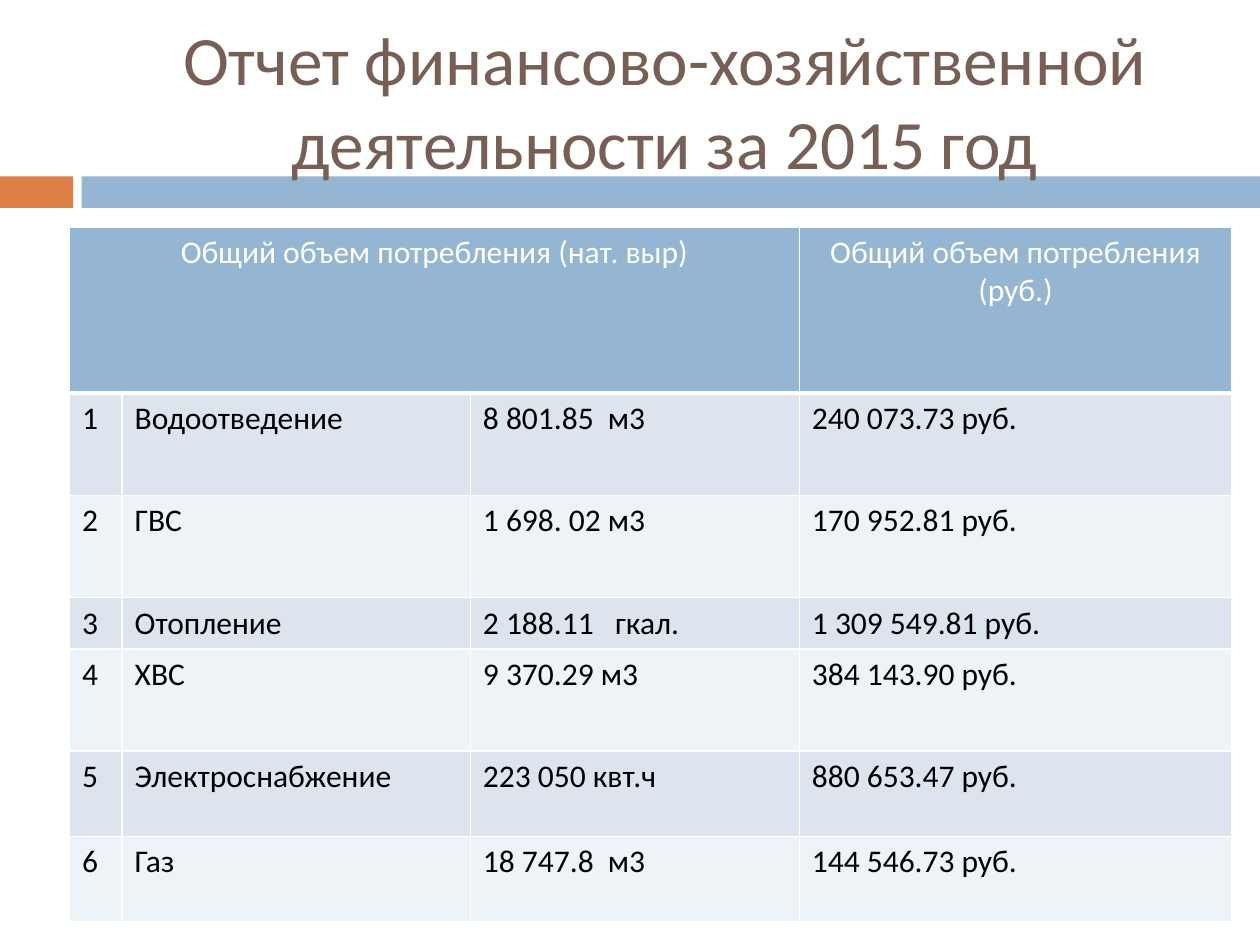
from dataclasses import dataclass

from lxml import etree
from pptx import Presentation
from pptx.dml.color import RGBColor
from pptx.enum.shapes import MSO_SHAPE
from pptx.enum.text import MSO_ANCHOR, PP_ALIGN
from pptx.oxml.ns import qn
from pptx.util import Pt

RECTANGLE = MSO_SHAPE.RECTANGLE
MIDDLE = MSO_ANCHOR.MIDDLE
LEFT = PP_ALIGN.LEFT
CENTER = PP_ALIGN.CENTER

FONT = "Calibri"
WHITE = "FFFFFF"
BLACK = "000000"
BLUE = "94B6D2"
ORANGE = "DD8047"
BROWN = "775F55"
BANDS = ("DCE5EE", "EEF3F7")

COLUMN_WIDTHS = (30, 199, 188, 247)
HEADER_HEIGHT = 95


@dataclass
class Bar:
    left: float
    width: float
    color: str


@dataclass
class Utility:
    name: str
    volume: str
    cost: str
    height: float


BARS = (Bar(0, 41.8, ORANGE), Bar(46.6, 673.4, BLUE))

UTILITIES = (
    Utility("Водоотведение", "8 801.85  м3", "240 073.73 руб.", 58.5),
    Utility("ГВС", "1 698. 02 м3", "170 952.81 руб.", 58.5),
    Utility("Отопление", "2 188.11   гкал.", "1 309 549.81 руб.", 29.2),
    Utility("ХВС", "9 370.29 м3", "384 143.90 руб.", 58.5),
    Utility("Электроснабжение", "223 050 квт.ч", "880 653.47 руб.", 48.7),
    Utility("Газ", "18 747.8  м3", "144 546.73 руб.", 48.7),
)


def paint(fill, color: str) -> None:
    fill.solid()
    fill.fore_color.rgb = RGBColor.from_string(color)


def write(frame, text: str, size: float, color: str, align) -> None:
    paragraph = frame.paragraphs[0]
    paragraph.alignment = align
    run = paragraph.add_run()
    run.text = text
    run.font.name = FONT
    run.font.size = Pt(size)
    run.font.bold = False
    paint(run.font.fill, color)


def draw_bar(slide, bar: Bar) -> None:
    shape = slide.shapes.add_shape(
        RECTANGLE, Pt(bar.left), Pt(100.8), Pt(bar.width), Pt(18)
    )
    shape.shadow.inherit = False
    shape.line.fill.background()
    paint(shape.fill, bar.color)


def draw_title(slide, text: str) -> None:
    title = slide.shapes.add_textbox(Pt(48), Pt(18), Pt(664), Pt(78))
    title.text_frame.word_wrap = True
    title.text_frame.vertical_anchor = MIDDLE
    write(title.text_frame, text, 39.6, BROWN, CENTER)


def style_cell(cell, color: str, bottom: float = 1) -> None:
    properties = cell._tc.get_or_add_tcPr()
    for side, width in (("L", 1), ("R", 1), ("T", 1), ("B", bottom)):
        border = etree.SubElement(properties, qn(f"a:ln{side}"), w=str(Pt(width)))
        border_fill = etree.SubElement(border, qn("a:solidFill"))
        etree.SubElement(border_fill, qn("a:srgbClr"), val=WHITE)
    paint(cell.fill, color)


def draw_consumption(slide) -> None:
    heights = [HEADER_HEIGHT] + [utility.height for utility in UTILITIES]
    table = slide.shapes.add_table(
        len(heights), len(COLUMN_WIDTHS), Pt(39.8), Pt(129.6),
        Pt(sum(COLUMN_WIDTHS)), Pt(sum(heights)),
    ).table
    for column, width in zip(table.columns, COLUMN_WIDTHS):
        column.width = Pt(width)
    for row, height in zip(table.rows, heights):
        row.height = Pt(height)

    for cell in table.rows[0].cells:
        style_cell(cell, BLUE, bottom=3)
    table.cell(0, 0).merge(table.cell(0, 2))
    for column, heading in (
        (0, "Общий объем потребления (нат. выр)"),
        (3, "Общий объем потребления (руб.)"),
    ):
        write(table.cell(0, column).text_frame, heading, 18, WHITE, CENTER)

    for number, utility in enumerate(UTILITIES, start=1):
        values = (str(number), utility.name, utility.volume, utility.cost)
        for cell, value in zip(table.rows[number].cells, values):
            style_cell(cell, BANDS[(number - 1) % 2])
            write(cell.text_frame, value, 18, BLACK, LEFT)


def main() -> None:
    presentation = Presentation()
    presentation.slide_width = Pt(720)
    presentation.slide_height = Pt(540)
    slide = presentation.slides.add_slide(presentation.slide_layouts[6])
    paint(slide.background.fill, WHITE)
    for bar in BARS:
        draw_bar(slide, bar)
    draw_title(slide, "Отчет финансово-хозяйственной деятельности за 2015 год")
    draw_consumption(slide)
    presentation.save("out.pptx")


if __name__ == "__main__":
    main()
